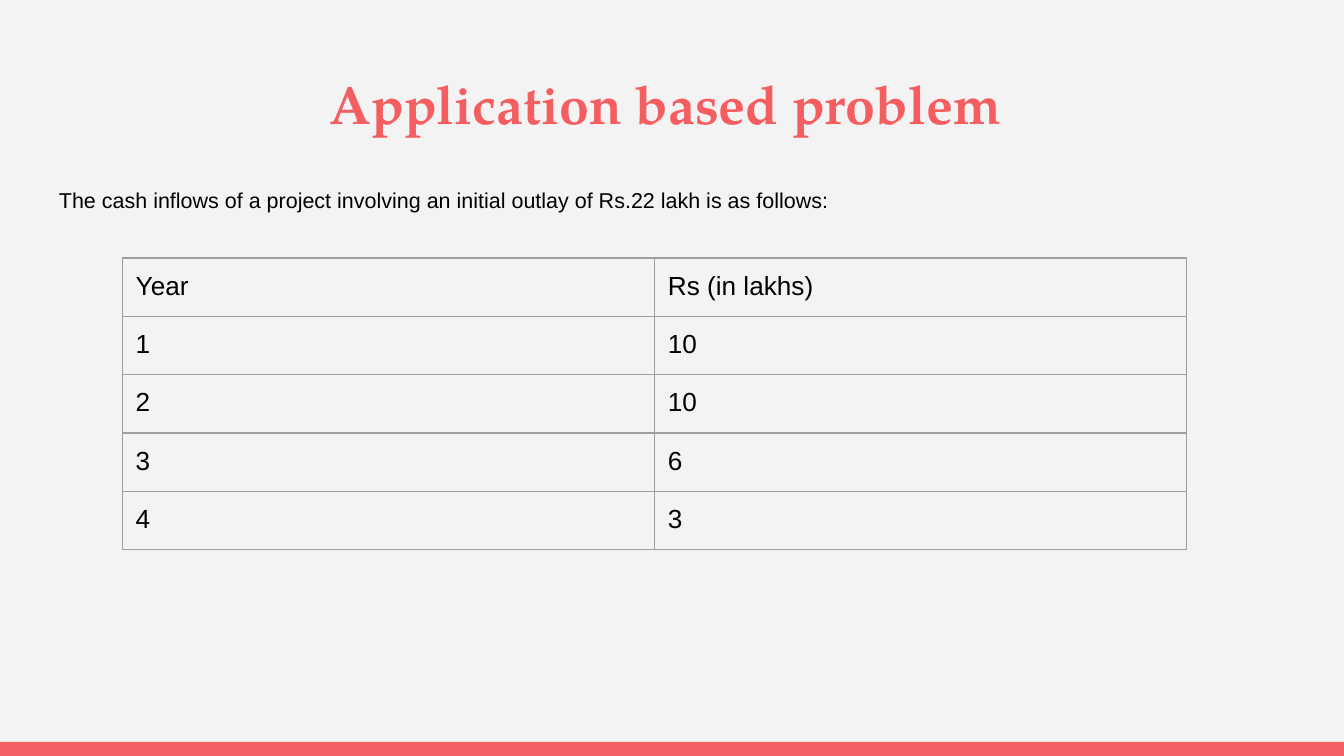
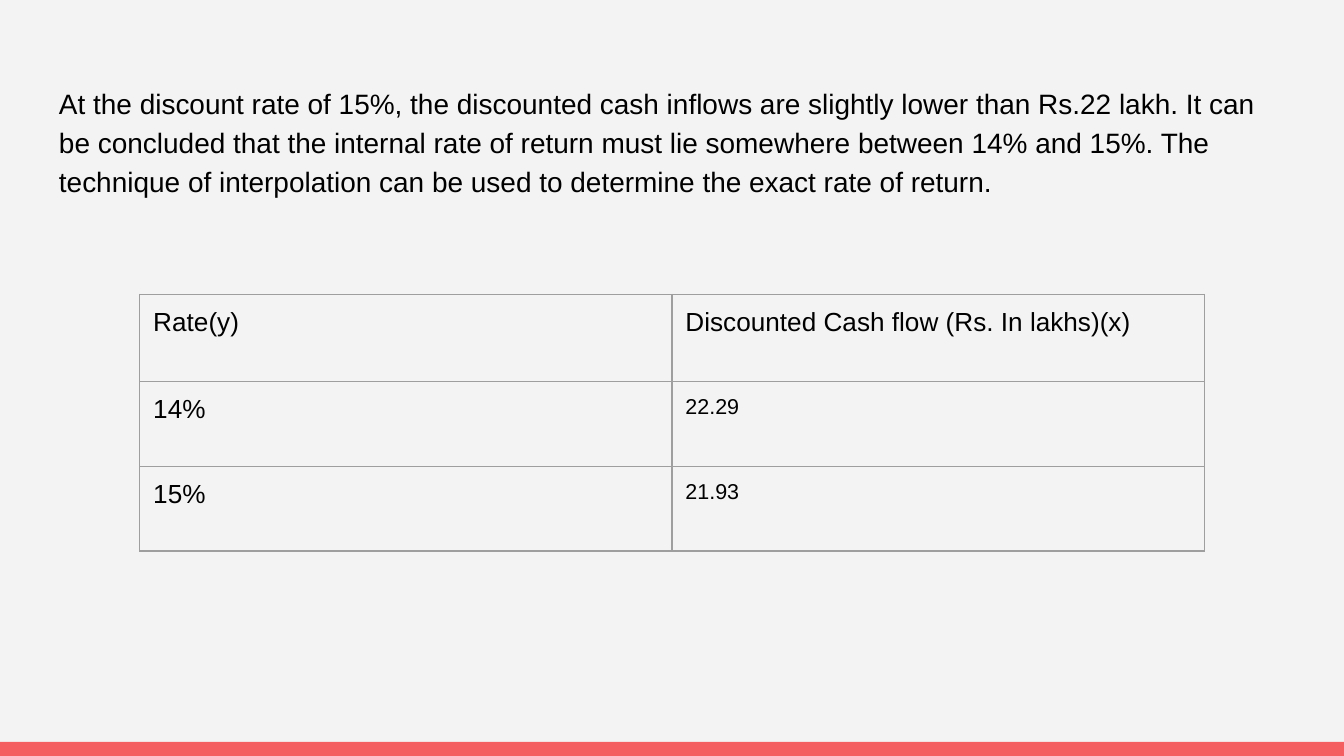
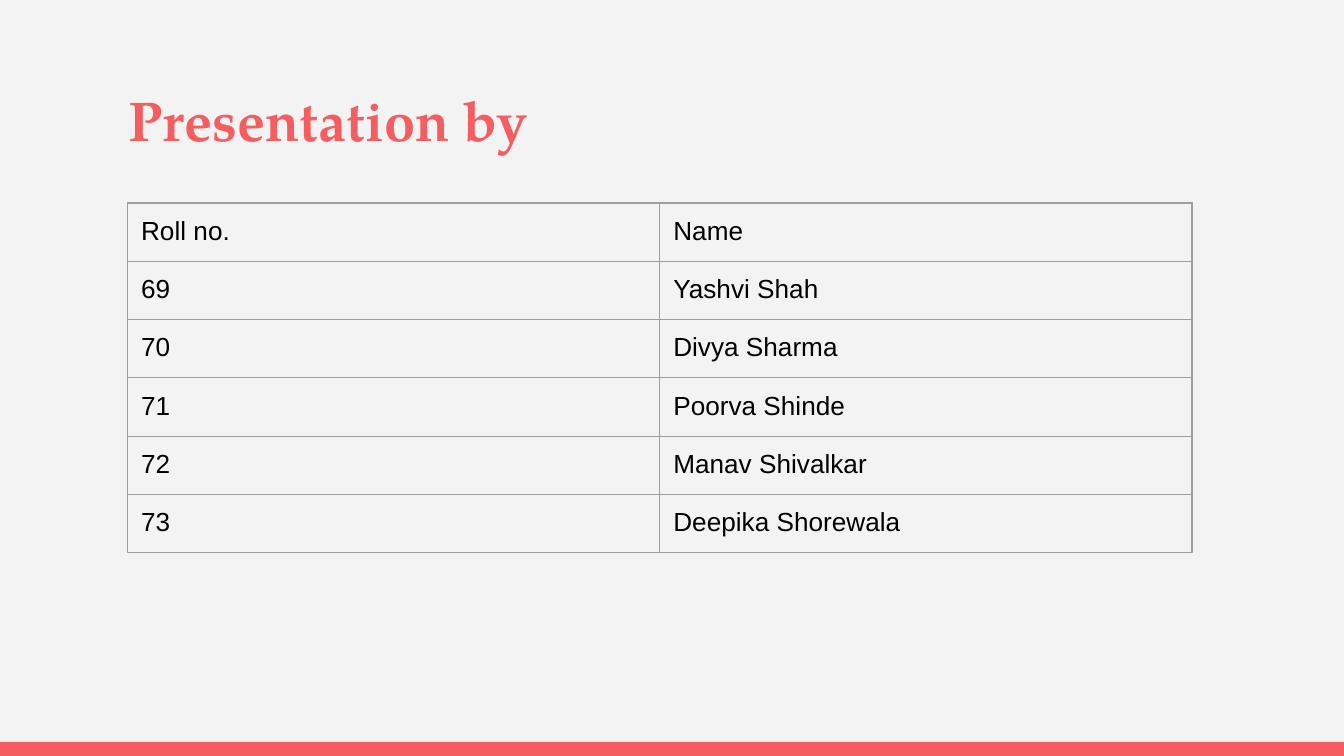
import lxml.etree
import pptx
import pptx.dml.color
import pptx.enum.shapes
import pptx.enum.text
import pptx.oxml.ns
import pptx.util

Inches = pptx.util.Inches

COLORS = {
    "background": "F3F3F3",
    "accent": "F55E61",
    "text": "000000",
    "border": "9E9E9E",
}
TITLE = {"font": "TeX Gyre Pagella", "color": "accent", "bold": True}
INSET = Inches(0.1)
TABLE_FRAME = Inches(3.28)
COLUMN_WIDTH = Inches(3.96)
BORDER_WIDTH = pptx.util.Pt(0.75)

SLIDES = [
    {
        "texts": [
            ("Application based problem ", (0.34, 0.43, 9.32, 0.68),
             {"size": 28.8, "align": "CENTER", **TITLE}),
            ("The cash inflows of a project involving an initial outlay of Rs.22 lakh is as follows:",
             (0.34, 1.26, 9.32, 3.96), {"size": 11.5, "spacing": 1.15}),
        ],
        "table_at": (0.91, 1.92),
        "row_heights": [0.42] * 5,
        "rows": [("Year", "Rs (in lakhs)"), ("1", "10"), ("2", "10"), ("3", "6"), ("4", "3")],
        "value_size": 14,
    },
    {
        "texts": [
            ("At the discount rate of 15%, the discounted cash inflows are slightly lower than Rs.22 lakh. "
             "It can be concluded that the internal rate of return must lie somewhere between 14% and 15%. "
             "The technique of interpolation can be used to determine the exact rate of return.",
             (0.34, 0.51, 9.32, 4.49), {"size": 15, "spacing": 1.15}),
        ],
        "table_at": (1.04, 2.19),
        "row_heights": [0.65, 0.63, 0.63],
        "rows": [("Rate(y)", "Discounted Cash flow (Rs. In lakhs)(x)"), ("14%", "22.29"), ("15%", "21.93")],
        "value_size": 11.5,
    },
    {
        "texts": [
            ("Presentation by", (0.86, 0.46, 7.92, 1.02), {"size": 30, "spacing": 1.15, **TITLE}),
        ],
        "table_at": (0.95, 1.51),
        "row_heights": [0.42] * 6,
        "rows": [
            ("Roll no.", "Name"),
            ("69", "Yashvi Shah"),
            ("70", "Divya Sharma"),
            ("71", "Poorva Shinde"),
            ("72", "Manav Shivalkar"),
            ("73", "Deepika Shorewala"),
        ],
        "value_size": 14,
    },
]


def rgb(name):
    return pptx.dml.color.RGBColor.from_string(COLORS[name])


def write_text(holder, text, size=14, font="Arial", color="text", bold=False, align="LEFT", spacing=None):
    holder.margin_left = holder.margin_right = INSET
    holder.margin_top = holder.margin_bottom = INSET
    holder.vertical_anchor = pptx.enum.text.MSO_ANCHOR.TOP
    paragraph = getattr(holder, "text_frame", holder).paragraphs[0]
    paragraph.alignment = getattr(pptx.enum.text.PP_ALIGN, align)
    paragraph.line_spacing = spacing
    run = paragraph.add_run()
    run.text = text
    run.font.size = pptx.util.Pt(size)
    run.font.name = font
    run.font.bold = bold
    run.font.color.rgb = rgb(color)


presentation = pptx.Presentation()
presentation.slide_width = Inches(10)
presentation.slide_height = Inches(10 * 9 / 16)
background = presentation.slide_master.background.fill
background.solid()
background.fore_color.rgb = rgb("background")

for content in SLIDES:
    slide = presentation.slides.add_slide(presentation.slide_layouts[6])

    band = slide.shapes.add_shape(
        pptx.enum.shapes.MSO_SHAPE.RECTANGLE, 0, Inches(5.52), presentation.slide_width, Inches(0.11))
    band.shadow.inherit = False
    band.fill.solid()
    band.fill.fore_color.rgb = rgb("accent")
    band.line.fill.background()

    for text, box, text_format in content["texts"]:
        text_frame = slide.shapes.add_textbox(*map(Inches, box)).text_frame
        text_frame.word_wrap = True
        write_text(text_frame, text, **text_format)

    left, top = content["table_at"]
    heights = content["row_heights"]
    table = slide.shapes.add_table(
        len(heights), 2, Inches(left), Inches(top), TABLE_FRAME, TABLE_FRAME).table
    table.first_row = False
    table.horz_banding = False

    for row_index, values in enumerate(content["rows"]):
        table.rows[row_index].height = Inches(heights[row_index])
        for column_index, value in enumerate(values):
            cell = table.cell(row_index, column_index)
            is_value = row_index > 0 and column_index == 1
            write_text(cell, value, size=content["value_size"] if is_value else 14)
            properties = cell._tc.get_or_add_tcPr()
            for side in ("a:lnL", "a:lnR", "a:lnT", "a:lnB"):
                border = lxml.etree.SubElement(properties, pptx.oxml.ns.qn(side), w=str(BORDER_WIDTH))
                fill = lxml.etree.SubElement(border, pptx.oxml.ns.qn("a:solidFill"))
                lxml.etree.SubElement(fill, pptx.oxml.ns.qn("a:srgbClr"), val=COLORS["border"])
            cell.fill.background()

    for column in table.columns:
        column.width = COLUMN_WIDTH
    table_frame = slide.shapes[-1]
    table_frame.width = table_frame.height = TABLE_FRAME

presentation.save("out.pptx")
